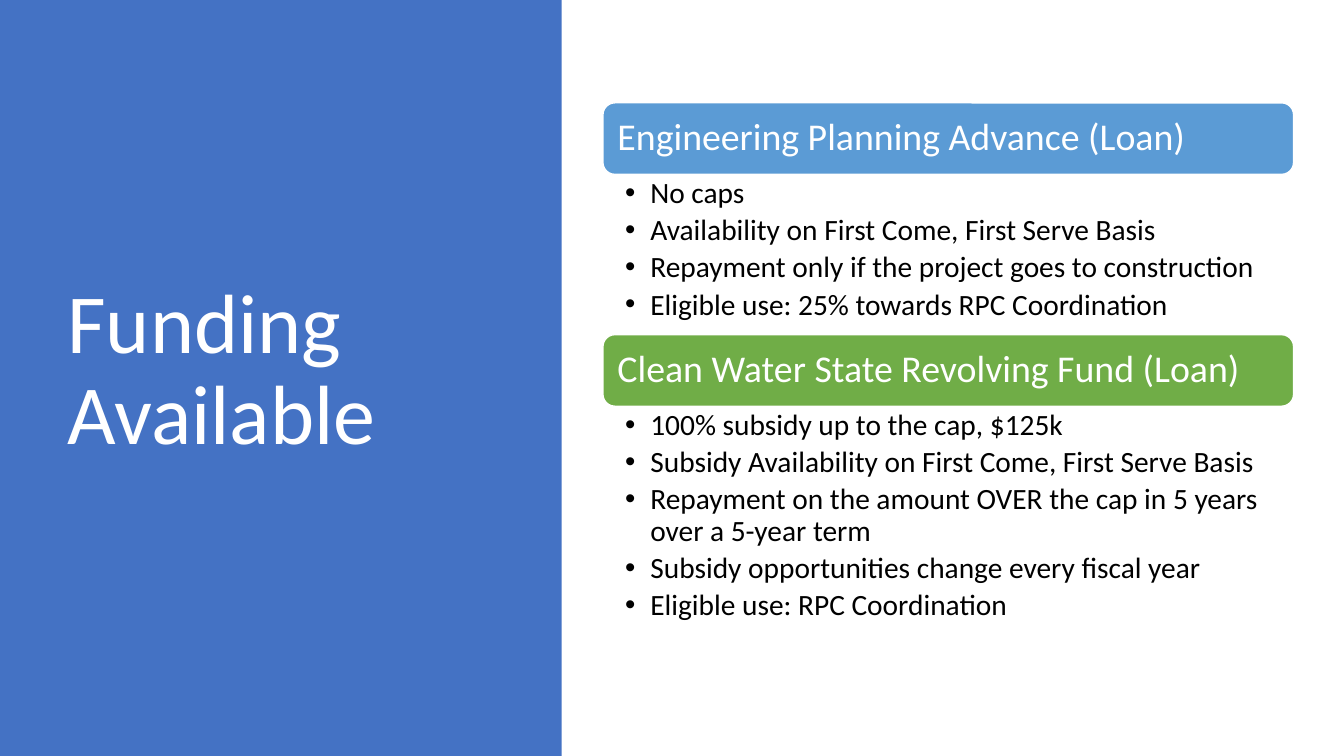
"""Build the Funding Available slide."""
from dataclasses import dataclass

import lxml.etree
import pptx
import pptx.dml.color
import pptx.enum.shapes
import pptx.enum.text
import pptx.oxml.ns
import pptx.shapes.autoshape
import pptx.slide
import pptx.text.text
import pptx.util

Inches = pptx.util.Inches
Pt = pptx.util.Pt
Color = pptx.dml.color.RGBColor
Shape = pptx.enum.shapes.MSO_SHAPE
Anchor = pptx.enum.text.MSO_ANCHOR


@dataclass(frozen=True)
class Theme:
    font: str = "Calibri"
    panel: Color = Color(0x44, 0x72, 0xC4)
    loan: Color = Color(0x5B, 0x9B, 0xD5)
    fund: Color = Color(0x70, 0xAD, 0x47)
    light: Color = Color(0xFF, 0xFF, 0xFF)
    dark: Color = Color(0, 0, 0)
    title_size: int = 60
    heading_size: int = 27
    bullet_size: int = 21
    bullet_gap: float = 3.8


@dataclass(frozen=True)
class FundingSource:
    heading: str
    color: Color
    bullets_height: float
    bullets: tuple[str, ...]


THEME = Theme()
SOURCES_LEFT, SOURCES_TOP, SOURCES_WIDTH = 5.98, 1.02, 6.85
HEADING_HEIGHT = 0.71
SOURCES = (
    FundingSource("Engineering Planning Advance (Loan)", THEME.loan, 1.59, (
        "No caps",
        "Availability on First Come, First Serve Basis",
        "Repayment only if the project goes to construction",
        "Eligible use: 25% towards RPC Coordination",
    )),
    FundingSource("Clean Water State Revolving Fund (Loan)", THEME.fund, 2.32, (
        "100% subsidy up to the cap, $125k",
        "Subsidy Availability on First Come, First Serve Basis",
        "Repayment on the amount OVER the cap in 5 years over a 5-year term",
        "Subsidy opportunities change every fiscal year",
        "Eligible use: RPC Coordination",
    )),
)


def set_frame(frame: pptx.text.text.TextFrame, anchor: Anchor,
              left: float, right: float, vertical: float) -> None:
    frame.word_wrap = True
    frame.vertical_anchor = anchor
    frame.margin_left, frame.margin_right = Inches(left), Inches(right)
    frame.margin_top = frame.margin_bottom = Inches(vertical)


def write(paragraph: pptx.text.text._Paragraph, text: str, size: int, color: Color) -> None:
    paragraph.text = text
    paragraph.alignment = pptx.enum.text.PP_ALIGN.LEFT
    paragraph.line_spacing = 0.9
    paragraph.font.name = THEME.font
    paragraph.font.size = Pt(size)
    paragraph.font.color.rgb = color


def add_bullet(paragraph: pptx.text.text._Paragraph) -> None:
    properties = paragraph._p.get_or_add_pPr()
    properties.set("marL", str(Inches(0.25)))
    properties.set("indent", str(-Inches(0.25)))
    tag = pptx.oxml.ns.qn
    lxml.etree.SubElement(properties, tag("a:buFont"), typeface="Arial")
    lxml.etree.SubElement(properties, tag("a:buChar"), char="•")


def add_block(slide: pptx.slide.Slide, kind: Shape, left: float, top: float, width: float,
              height: float, color: Color) -> pptx.shapes.autoshape.Shape:
    shape = slide.shapes.add_shape(kind, Inches(left), Inches(top), Inches(width), Inches(height))
    shape.shadow.inherit = False
    shape.fill.solid()
    shape.fill.fore_color.rgb = color
    shape.line.fill.background()
    return shape


def add_title(slide: pptx.slide.Slide, text: str) -> None:
    box = slide.shapes.add_textbox(Inches(0.57), Inches(0.68), Inches(4.16), Inches(6.02))
    set_frame(box.text_frame, Anchor.MIDDLE, 0.1, 0.1, 0.05)
    write(box.text_frame.paragraphs[0], text, THEME.title_size, THEME.light)


def add_source(slide: pptx.slide.Slide, source: FundingSource, top: float) -> float:
    heading = add_block(slide, Shape.ROUNDED_RECTANGLE, SOURCES_LEFT, top, SOURCES_WIDTH,
                        HEADING_HEIGHT, source.color)
    heading.line.color.rgb = THEME.light
    heading.line.width = Pt(1)
    set_frame(heading.text_frame, Anchor.MIDDLE, 0.11, 0.11, 0.11)
    write(heading.text_frame.paragraphs[0], source.heading, THEME.heading_size, THEME.light)

    bullets_top = top + HEADING_HEIGHT
    box = slide.shapes.add_textbox(Inches(SOURCES_LEFT), Inches(bullets_top),
                                   Inches(SOURCES_WIDTH), Inches(source.bullets_height))
    frame = box.text_frame
    set_frame(frame, Anchor.TOP, 0.22, 0.21, 0.04)
    for index, text in enumerate(source.bullets):
        paragraph = frame.add_paragraph() if index else frame.paragraphs[0]
        write(paragraph, text, THEME.bullet_size, THEME.dark)
        paragraph.space_after = Pt(THEME.bullet_gap)
        add_bullet(paragraph)
    return bullets_top + source.bullets_height


def main() -> None:
    presentation = pptx.Presentation()
    presentation.slide_width, presentation.slide_height = Inches(13.33), Inches(7.5)
    slide = presentation.slides.add_slide(presentation.slide_layouts[6])
    add_block(slide, Shape.RECTANGLE, 0, 0, 5.57, 7.5, THEME.panel)
    add_title(slide, "Funding Available")
    top = SOURCES_TOP
    for source in SOURCES:
        top = add_source(slide, source, top)
    presentation.save("out.pptx")


if __name__ == "__main__":
    main()
